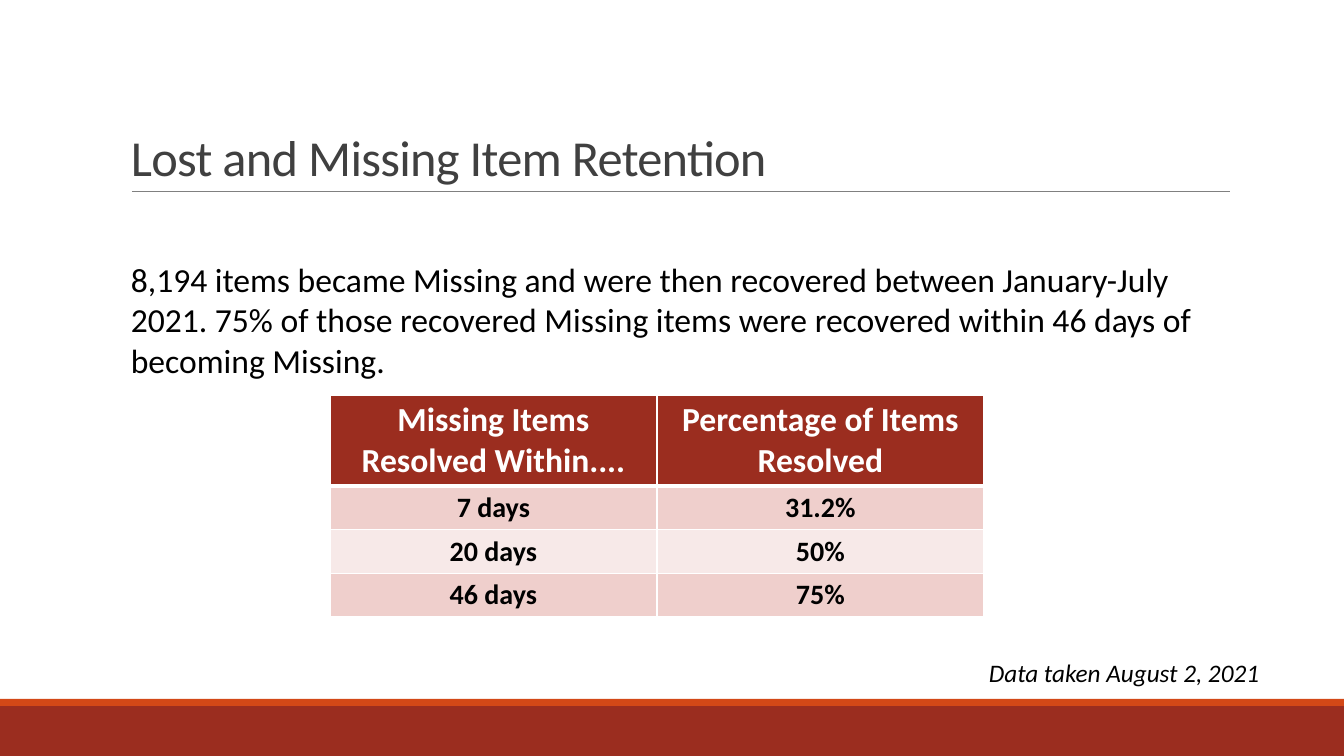
from dataclasses import dataclass

from lxml import etree
from pptx import Presentation
from pptx.dml.color import RGBColor
from pptx.enum.shapes import MSO_CONNECTOR, MSO_SHAPE
from pptx.enum.text import MSO_ANCHOR, PP_ALIGN
from pptx.oxml.ns import qn
from pptx.util import Emu, Pt

TITLE = "Lost and Missing Item Retention"
BODY = (
    "8,194 items became Missing and were then recovered between January-July 2021. "
    "75% of those recovered Missing items were recovered within 46 days of becoming Missing."
)
NOTE = "Data taken August 2, 2021"
ROWS = [
    ("Missing Items Resolved Within....", "Percentage of Items Resolved"),
    ("7 days", "31.2%"),
    ("20 days", "50%"),
    ("46 days", "75%"),
]

# Boxes are left, top, width, height in px
SLIDE_W, SLIDE_H = 1344, 756
TITLE_BOX = (121, 31, 1109, 161)
BODY_BOX = (121, 254, 1125, 234)
NOTE_BOX = (979, 652, 302, 40)
RULE_LEFT, RULE_RIGHT, RULE_Y = 132, 1230, 191
FOOTER_TOP, STRIPE_H = 706, 7
TABLE_LEFT, TABLE_TOP, COL_W = 330, 395, 327
HEADER_H, ROW_H = 90, 43


@dataclass(frozen=True)
class Theme:
    font: str = "Calibri"
    dark: str = "9B2D1F"
    accent: str = "D34817"
    rule: str = "808080"
    title: str = "404040"
    text: str = "000000"
    light: str = "FFFFFF"
    bands: tuple = ("EFCFCC", "F7E9E8")
    title_size: int = 36
    body_size: int = 24
    cell_size: int = 20
    note_size: int = 18


T = Theme()


def px(n):
    return Emu(round(n * 914400 / 100.8))


def rgb(color):
    return RGBColor.from_string(color)


def write(tf, text, size, color, bold=False, italic=False):
    p = tf.paragraphs[0]
    p.text = text
    f = p.runs[0].font
    f.name, f.size, f.bold, f.italic = T.font, Pt(size), bold, italic
    f.color.rgb = rgb(color)
    return p


def add_text(slide, box, text, size, color, **style):
    tf = slide.shapes.add_textbox(*map(px, box)).text_frame
    tf.word_wrap = True
    return tf, write(tf, text, size, color, **style)


def add_bar(slide, top, height, color):
    sp = slide.shapes.add_shape(MSO_SHAPE.RECTANGLE, *map(px, (0, top, SLIDE_W, height)))
    sp.shadow.inherit = False
    sp.fill.solid()
    sp.fill.fore_color.rgb = rgb(color)
    sp.line.fill.background()


def add_rule(slide):
    line = slide.shapes.add_connector(
        MSO_CONNECTOR.STRAIGHT, *map(px, (RULE_LEFT, RULE_Y, RULE_RIGHT, RULE_Y)))
    line.line.color.rgb = rgb(T.rule)
    line.line.width = Pt(0.5)
    etree.SubElement(line._element.spPr, qn("a:effectLst"))


def set_borders(cell, **widths):
    """Draw light borders; widths maps L, R, T and B to points, in that order."""
    tcPr = cell._tc.get_or_add_tcPr()
    for side, width in widths.items():
        ln = etree.SubElement(tcPr, qn(f"a:ln{side}"), w=str(Pt(width)))
        fill = etree.SubElement(ln, qn("a:solidFill"))
        etree.SubElement(fill, qn("a:srgbClr"), val=T.light)


def add_retention_table(slide):
    heights = [HEADER_H] + [ROW_H] * (len(ROWS) - 1)
    n_cols = len(ROWS[0])
    table = slide.shapes.add_table(
        len(ROWS), n_cols, px(TABLE_LEFT), px(TABLE_TOP),
        px(COL_W * n_cols), px(sum(heights))).table
    for col in table.columns:
        col.width = px(COL_W)
    for i, (values, height) in enumerate(zip(ROWS, heights)):
        table.rows[i].height = px(height)
        header = i == 0
        fill = T.dark if header else T.bands[(i - 1) % 2]
        size, color = (T.body_size, T.light) if header else (T.cell_size, T.text)
        for j, value in enumerate(values):
            cell = table.cell(i, j)
            set_borders(cell, L=1, R=1, T=3 if i == 1 else 1, B=3 if header else 1)
            cell.fill.solid()
            cell.fill.fore_color.rgb = rgb(fill)
            p = write(cell.text_frame, value, size, color, bold=True)
            p.alignment = PP_ALIGN.CENTER


def main():
    prs = Presentation()
    prs.slide_width, prs.slide_height = px(SLIDE_W), px(SLIDE_H)
    slide = prs.slides.add_slide(prs.slide_layouts[6])

    add_bar(slide, FOOTER_TOP, SLIDE_H - FOOTER_TOP, T.dark)
    add_bar(slide, FOOTER_TOP - STRIPE_H, STRIPE_H, T.accent)
    add_rule(slide)

    tf, p = add_text(slide, TITLE_BOX, TITLE, T.title_size, T.title)
    tf.vertical_anchor = MSO_ANCHOR.BOTTOM
    p.line_spacing = 0.85
    p.runs[0].font._element.set("spc", "-50")

    add_text(slide, BODY_BOX, BODY, T.body_size, T.text)
    add_retention_table(slide)
    add_text(slide, NOTE_BOX, NOTE, T.note_size, T.text, italic=True)
    prs.save("out.pptx")


if __name__ == "__main__":
    main()
